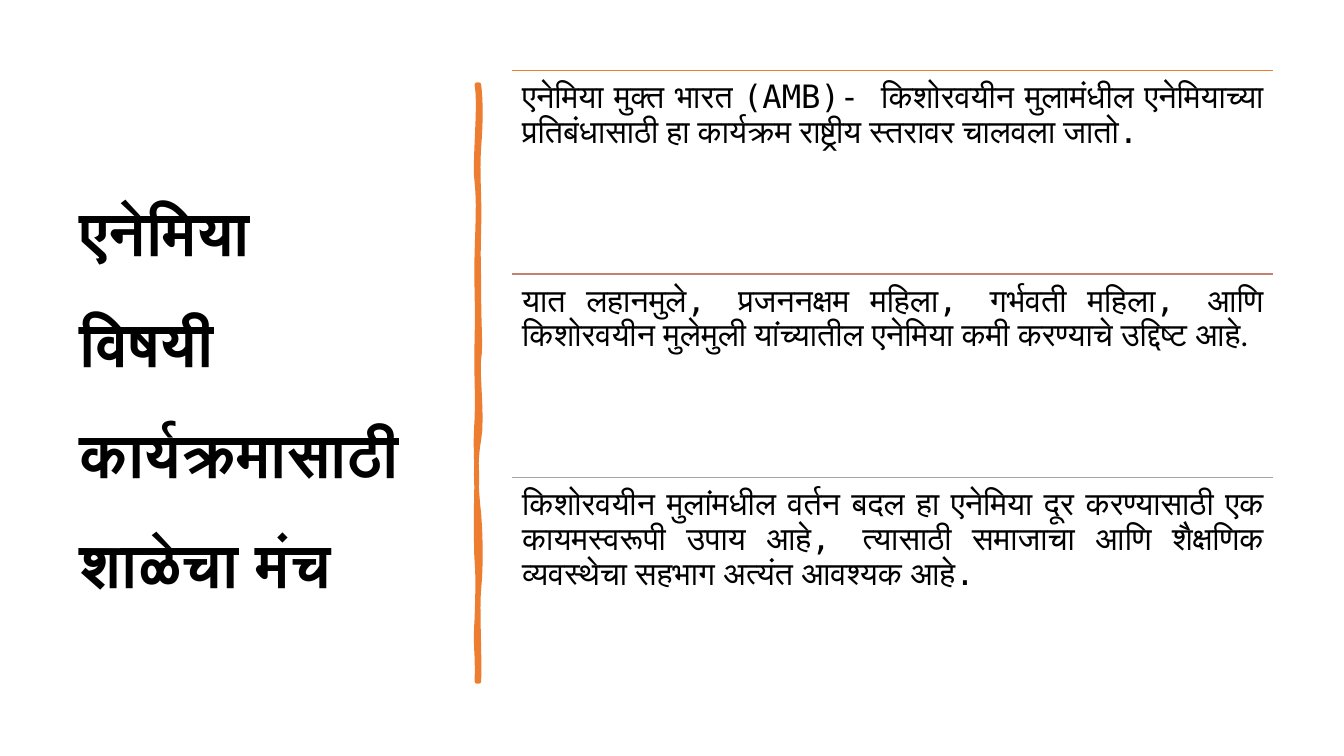
from collections import namedtuple

from lxml.etree import SubElement
from pptx import Presentation
from pptx.dml.color import RGBColor
from pptx.enum.shapes import MSO_CONNECTOR as Connector
from pptx.enum.text import MSO_ANCHOR as Anchor, MSO_AUTO_SIZE as AutoSize, PP_ALIGN as Align
from pptx.oxml.ns import qn
from pptx.util import Inches, Pt

Box = namedtuple("Box", "left top width height")

COLOURS = {"text": "000000", "orange": "ED7D31", "clay": "C48170", "grey": "A5A5A5"}
MONO = "DejaVu Sans Mono"
TITLE_BOX = Box(0.69, 0.7, 3.74, 6.11)
STROKE_BOX = Box(4.73, 0.84, 0.02, 5.92)
POINTS_BOX = Box(5.08, 0.7, 7.55, 6.06)

TITLE = "एनेमिया \vविषयी कार्यक्रमासाठी शाळेचा मंच"
POINTS = [
    ("orange", [("एनेमिया मुक्त भारत (AMB)- किशोरवयीन मुलामंधील एनेमियाच्या "
                 "प्रतिबंधासाठी हा कार्यक्रम राष्ट्रीय स्तरावर चालवला जातो. ", MONO)]),
    ("clay", [("यात लहानमुले, प्रजननक्षम महिला, गर्भवती महिला, आणि किशोरवयीन "
               "मुलेमुली यांच्यातील एनेमिया कमी करण्याचे उद्दिष्ट आहे", MONO),
              (". ", "Calibri")]),
    ("grey", [("किशोरवयीन मुलांमधील वर्तन बदल हा एनेमिया दूर करण्यासाठी एक "
               "कायमस्वरूपी उपाय आहे, त्यासाठी समाजाचा आणि शैक्षणिक "
               "व्यवस्थेचा सहभाग अत्यंत आवश्यक आहे. ", MONO)]),
]

RIGHT_EDGE = [(0.02, 0), (0.04, 0.18), (0.04, 0.35), (0.02, 0.62), (0, 0.89), (0.03, 1.11),
              (0.02, 1.42), (0.01, 1.73), (0.02, 1.78), (0.02, 2.1), (0.02, 2.41),
              (0.04, 2.58), (0.02, 2.72), (0, 2.86), (0.06, 3.3), (0.02, 3.52),
              (-0.02, 3.73), (-0.01, 4), (0.02, 4.26), (0.04, 4.52), (0.04, 4.8),
              (0.02, 5), (0, 5.19), (0.03, 5.66), (0.02, 5.92)]
LEFT_EDGE = [(0, 5.92), (0.01, 5.62), (-0.02, 5.6), (0, 5.29), (0.01, 4.99), (0.01, 4.86),
             (0, 4.73), (-0.01, 4.6), (-0.01, 4.11), (0, 3.93), (0, 3.75), (-0.02, 3.61),
             (0, 3.31), (0.01, 3.02), (-0.01, 2.89), (0, 2.51), (0.01, 2.14),
             (-0.01, 1.97), (0, 1.66), (0.01, 1.34), (0.02, 1.16), (0, 0.97),
             (-0.03, 0.79), (0.04, 0.2), (0, 0)]


def colour(name):
    """Return a named colour of the slide."""
    return RGBColor.from_string(COLOURS[name])


def apply_format(target, values):
    """Set each attribute in a dict on the target."""
    for name, value in values.items():
        setattr(target, name, value)


def place(shape, box):
    """Move a shape to a box given in inches."""
    apply_format(shape, {name: Inches(value) for name, value in box._asdict().items()})


def flatten(knots, steps=8):
    """Return points along a chain of cubic curves."""
    points = [knots[0]]
    for first in range(0, len(knots) - 1, 3):
        curve = knots[first:first + 4]
        for step in range(1, steps + 1):
            share = step / steps
            rest = 1 - share
            weights = (rest ** 3, 3 * rest ** 2 * share, 3 * rest * share ** 2, share ** 3)
            points.append(tuple(sum(weight * knot[axis] for weight, knot in zip(weights, curve))
                                for axis in (0, 1)))
    return points


def add_title(slide, box):
    """Fill the title placeholder in the left column."""
    title = slide.shapes.title
    place(title, box)
    frame = title.text_frame
    apply_format(frame, {"text": TITLE, "word_wrap": True, "auto_size": AutoSize.NONE,
                         "vertical_anchor": Anchor.MIDDLE})
    para = frame.paragraphs[0]
    apply_format(para, {"alignment": Align.LEFT, "line_spacing": 1.5})
    for span in para.runs:
        apply_format(span.font, {"name": MONO, "size": Pt(44), "bold": True})
        span.font.color.rgb = colour("text")


def add_stroke(slide, box):
    """Draw the wavy upright stroke between the columns."""
    outline = [(Inches(box.left + across), Inches(box.top + down))
               for across, down in flatten(RIGHT_EDGE) + flatten(LEFT_EDGE)]
    builder = slide.shapes.build_freeform(*outline[0])
    builder.add_line_segments(outline[1:], close=True)
    stroke = builder.convert_to_shape()
    stroke.shadow.inherit = False
    stroke.fill.solid()
    stroke.fill.fore_color.rgb = colour("orange")
    stroke.line.color.rgb = colour("orange")
    stroke.line.width = Pt(3.25)


def add_point(slide, box, accent, spans):
    """Place one ruled paragraph in its row."""
    left, top, right = Inches(box.left), Inches(box.top), Inches(box.left + box.width)
    rule = slide.shapes.add_connector(Connector.STRAIGHT, left, top, right, top)
    rule.line.color.rgb = colour(accent)
    rule.line.width = Pt(1)
    SubElement(rule._element.spPr, qn("a:effectLst"))
    frame = slide.shapes.add_textbox(*map(Inches, box)).text_frame
    sides = ("left", "top", "right", "bottom")
    apply_format(frame, {f"margin_{side}": Inches(0.1) for side in sides})
    frame.word_wrap = True
    para = frame.paragraphs[0]
    apply_format(para, {"alignment": Align.JUSTIFY, "line_spacing": 0.9})
    for words, face in spans:
        span = para.add_run()
        span.text = words
        apply_format(span.font, {"name": face, "size": Pt(23)})
        span.font.color.rgb = colour("text")


def add_points(slide, box):
    """Stack the points in equal rows of the box."""
    row = box.height / len(POINTS)
    for index, (accent, spans) in enumerate(POINTS):
        add_point(slide, box._replace(top=box.top + index * row, height=row), accent, spans)


def main():
    """Build and save the one-slide deck."""
    deck = Presentation()
    apply_format(deck, {"slide_width": Inches(13.33), "slide_height": Inches(7.5)})
    slide = deck.slides.add_slide(deck.slide_layouts.get_by_name("Title Only"))
    add_title(slide, TITLE_BOX)
    add_stroke(slide, STROKE_BOX)
    add_points(slide, POINTS_BOX)
    deck.save("out.pptx")


if __name__ == "__main__":
    main()
